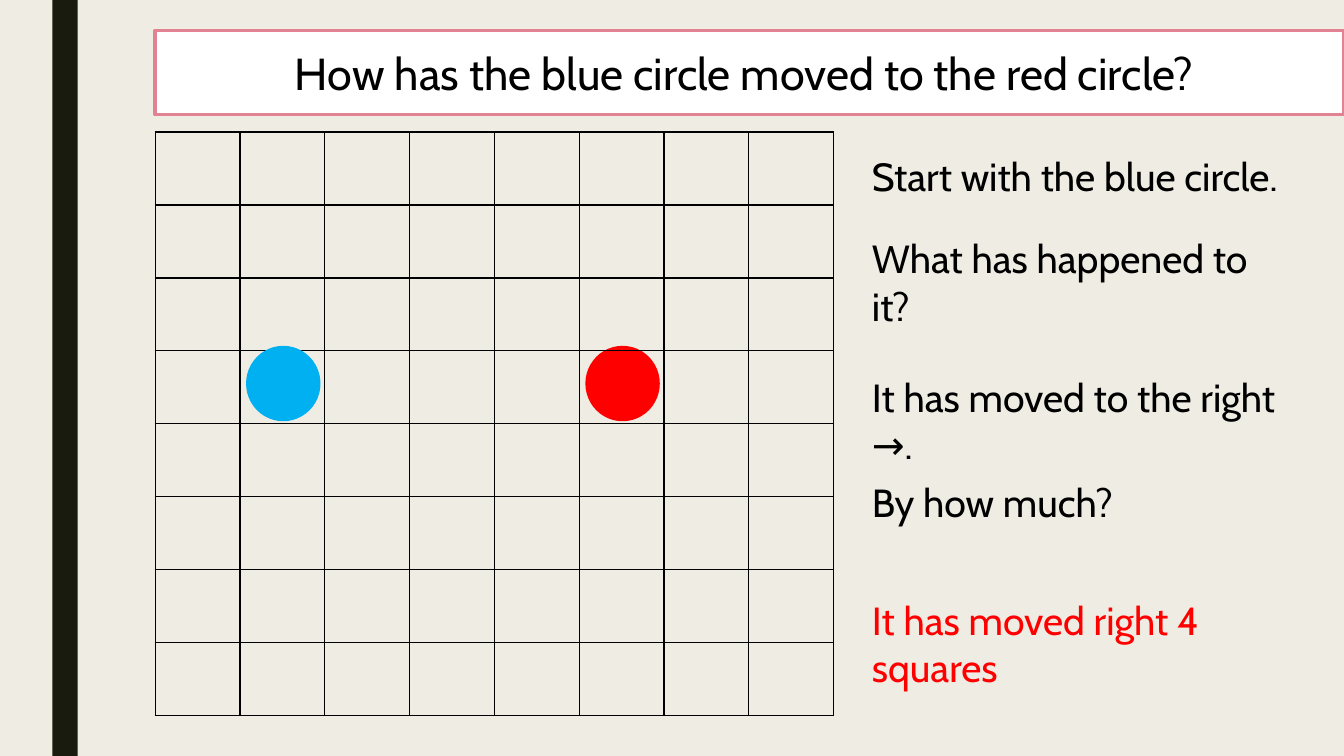
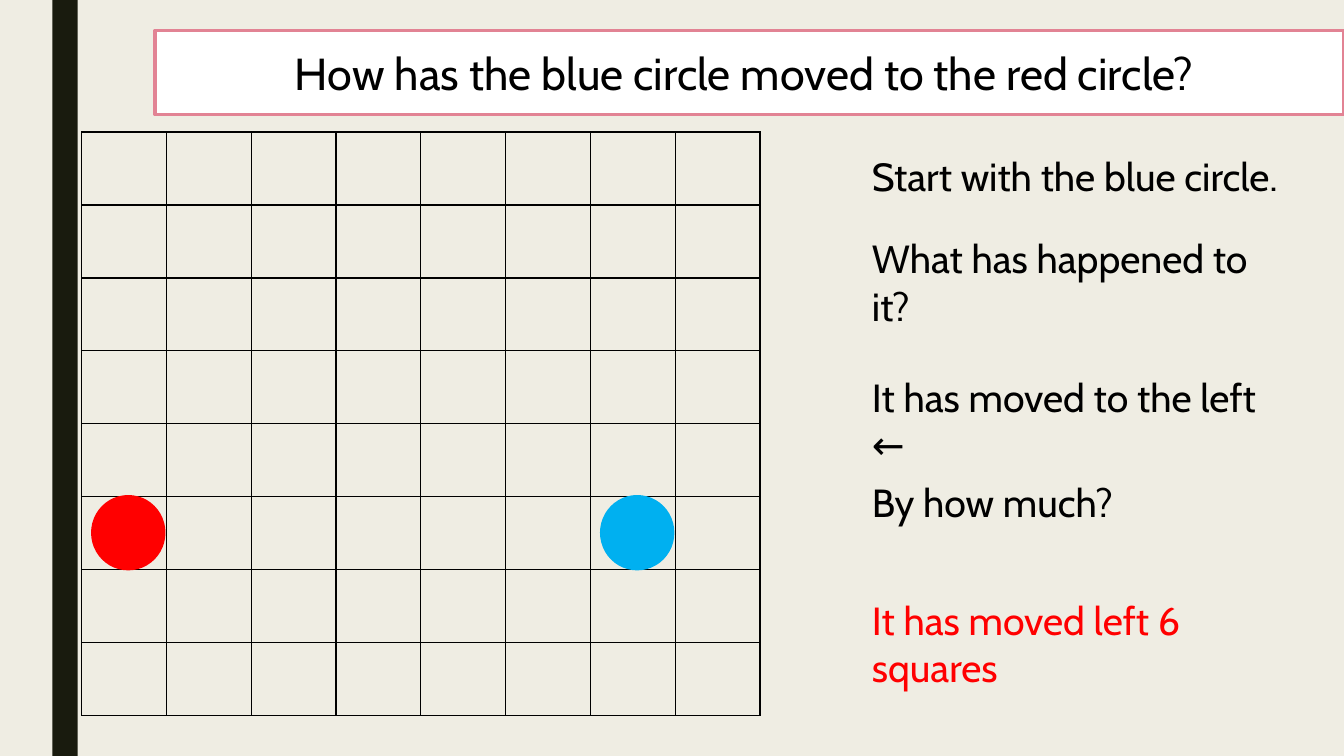
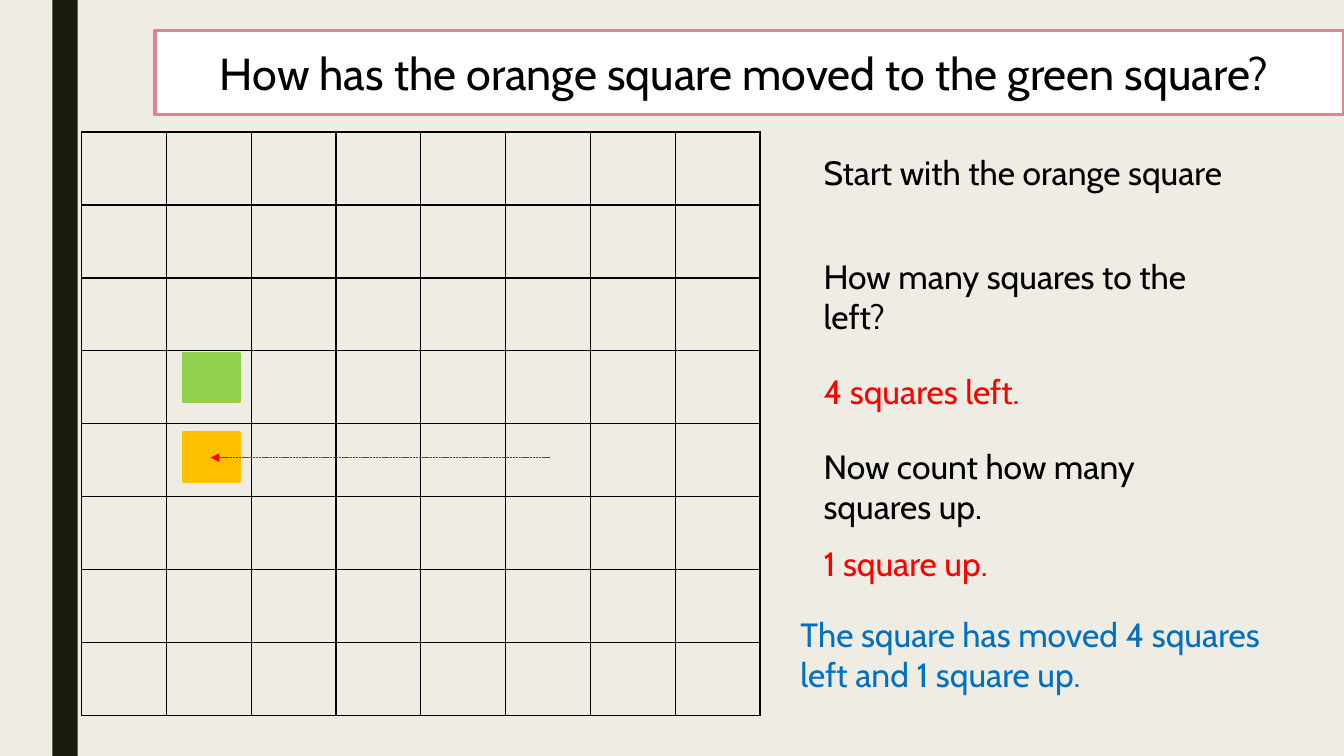
from lxml.etree import SubElement
from pptx import Presentation
from pptx.dml.color import RGBColor
from pptx.enum.dml import MSO_LINE
from pptx.enum.shapes import MSO_CONNECTOR, MSO_SHAPE
from pptx.enum.text import MSO_ANCHOR, MSO_AUTO_SIZE, PP_ALIGN
from pptx.oxml.ns import qn
from pptx.util import Inches, Pt

FONT = "Cabin"
BACKGROUND, BAND, TITLE_BORDER = "EFEDE3", "191B0E", "E28394"
BLACK, WHITE, RED, BLUE = "000000", "FFFFFF", "FF0000", "00B0F0"
ORANGE, GREEN, CONCLUSION = "FFC000", "92D050", "0070C0"
TITLE_ONLY = 5

GRID_TOP, GRID_WIDTH, GRID_HEIGHT, GRID_COUNT = 1.31, 6.73, 5.79, 8
COLUMN = GRID_WIDTH / GRID_COUNT
CIRCLE, SQUARE = (0.7, 0.71), (0.55, 0.47)
OUTLINE = 2.75


def rgb(color):
    return RGBColor.from_string(color)


def paint(shape, fill, border=None):
    shape.fill.solid()
    shape.fill.fore_color.rgb = rgb(fill)
    if border:
        shape.line.color.rgb = rgb(border)
        shape.line.width = Pt(OUTLINE)
    else:
        shape.line.fill.background()


def write(frame, text, size=28, color=BLACK, align=PP_ALIGN.LEFT, anchor=MSO_ANCHOR.TOP):
    frame.word_wrap = True
    frame.auto_size = MSO_AUTO_SIZE.SHAPE_TO_FIT_TEXT
    frame.vertical_anchor = anchor
    paragraph = frame.paragraphs[0]
    paragraph.alignment = align
    run = paragraph.add_run()
    run.text = text
    run.font.name = FONT
    run.font.size = Pt(size)
    run.font.color.rgb = rgb(color)


def add_text(slide, text, left, top, width=4.33, height=0.57, **style):
    box = slide.shapes.add_textbox(Inches(left), Inches(top), Inches(width), Inches(height))
    write(box.text_frame, text, **style)


def add_figure(slide, preset, left, top, size, color, border=None):
    width, height = size
    figure = slide.shapes.add_shape(preset, Inches(left), Inches(top), Inches(width), Inches(height))
    figure.shadow.inherit = False
    paint(figure, color, border)
    return figure


def add_circle(slide, left, top, color):
    add_figure(slide, MSO_SHAPE.OVAL, left, top, CIRCLE, color, color)


def add_square(slide, left, top, color):
    add_figure(slide, MSO_SHAPE.RECTANGLE, left, top, SQUARE, color, color)


def border_cell(cell):
    properties = cell._tc.get_or_add_tcPr()
    for side in ("a:lnL", "a:lnR", "a:lnT", "a:lnB"):
        edge = SubElement(properties, qn(side), w=str(Pt(1)))
        SubElement(SubElement(edge, qn("a:solidFill")), qn("a:srgbClr"), val=BLACK)
    cell.fill.background()


def add_grid(slide, left):
    grid = slide.shapes.add_table(
        GRID_COUNT, GRID_COUNT,
        Inches(left), Inches(GRID_TOP), Inches(GRID_WIDTH), Inches(GRID_HEIGHT),
    ).table
    grid.first_row = grid.horz_banding = False
    for cell in grid.iter_cells():
        border_cell(cell)


def add_arrow(slide, start, end, y):
    arrow = slide.shapes.add_connector(
        MSO_CONNECTOR.STRAIGHT, Inches(start), Inches(y), Inches(end), Inches(y))
    arrow.line.color.rgb = rgb(RED)
    arrow.line.width = Pt(0.5)
    arrow.line.dash_style = MSO_LINE.SQUARE_DOT
    properties = arrow.element.spPr
    SubElement(properties.find(qn("a:ln")), qn("a:tailEnd"), type="triangle")
    SubElement(properties, qn("a:effectLst"))


def add_slide(prs, question):
    slide = prs.slides.add_slide(prs.slide_layouts[TITLE_ONLY])
    title = slide.shapes.title
    title.left, title.top = Inches(1.54), Inches(0.4)
    title.width, title.height = Inches(11.79), Inches(0.64)
    paint(title, WHITE, TITLE_BORDER)
    write(title.text_frame, question, size=32, align=PP_ALIGN.CENTER, anchor=MSO_ANCHOR.MIDDLE)
    return slide


def add_circle_slide(prs):
    return add_slide(prs, "How has the blue circle moved to the red circle? ")


def add_circle_prompts(slide, direction, arrow, squares):
    left = 8.55
    add_text(slide, "Start with the blue circle.", left, 1.46)
    add_text(slide, "What has happened to it?", left, 2.28, height=1.04)
    add_text(slide, f"It has moved to the {direction} {arrow}", left, 3.65, height=1.04)
    add_text(slide, "By how much?", left, 4.7)
    add_text(slide, f"It has moved {direction} {squares} squares", left, 5.87, height=1.04, color=RED)


def style_master(prs, slide):
    """Set the background and move a side band from the slide to the master."""
    master = prs.slide_master
    master.background.fill.solid()
    master.background.fill.fore_color.rgb = rgb(BACKGROUND)
    band = add_figure(slide, MSO_SHAPE.RECTANGLE, 0.52, 0, (0.25, 7.5), BAND)
    band.element.nvSpPr.cNvPr.set("id", "99")
    master.shapes.element.insert(2, band.element)


def build_move_right(prs):
    slide = add_circle_slide(prs)
    style_master(prs, slide)
    blue_left, top, squares = 2.46, 3.45, 4
    add_circle(slide, blue_left + squares * COLUMN, top, RED)
    add_grid(slide, 1.54)
    add_circle(slide, blue_left, top, BLUE)
    add_circle_prompts(slide, "right", "→.", squares)


def build_move_left(prs):
    slide = add_circle_slide(prs)
    blue_left, top, squares = 5.97, 4.93, 6
    add_grid(slide, 0.81)
    add_circle(slide, blue_left - squares * COLUMN, top, RED)
    add_circle(slide, blue_left, top, BLUE)
    add_circle_prompts(slide, "left", "←", squares)


def build_move_left_and_up(prs):
    slide = add_slide(prs, "How has the orange square moved to the green square? ")
    add_grid(slide, 0.81)
    add_square(slide, 1.82, 4.3, ORANGE)
    add_square(slide, 1.82, 3.51, GREEN)
    add_arrow(slide, 5.45, 2.09, 4.54)
    for text, top, height, color in (
        ("Start with the orange square", 1.46, 0.5, BLACK),
        ("How many squares to the left?", 2.49, 0.91, BLACK),
        ("4 squares left.", 3.63, 0.5, RED),
        ("Now count how many squares up.", 4.37, 0.91, BLACK),
        ("1 square up.", 5.34, 0.5, RED),
    ):
        add_text(slide, text, 8.07, top, height=height, size=24, color=color)
    add_text(slide, "The square has moved 4 squares left and 1 square up.",
             7.84, 6.04, width=5.04, height=0.91, size=24, color=CONCLUSION)


def main():
    prs = Presentation()
    prs.slide_width, prs.slide_height = Inches(13.33), Inches(7.5)
    build_move_right(prs)
    build_move_left(prs)
    build_move_left_and_up(prs)
    prs.save("out.pptx")


if __name__ == "__main__":
    main()
